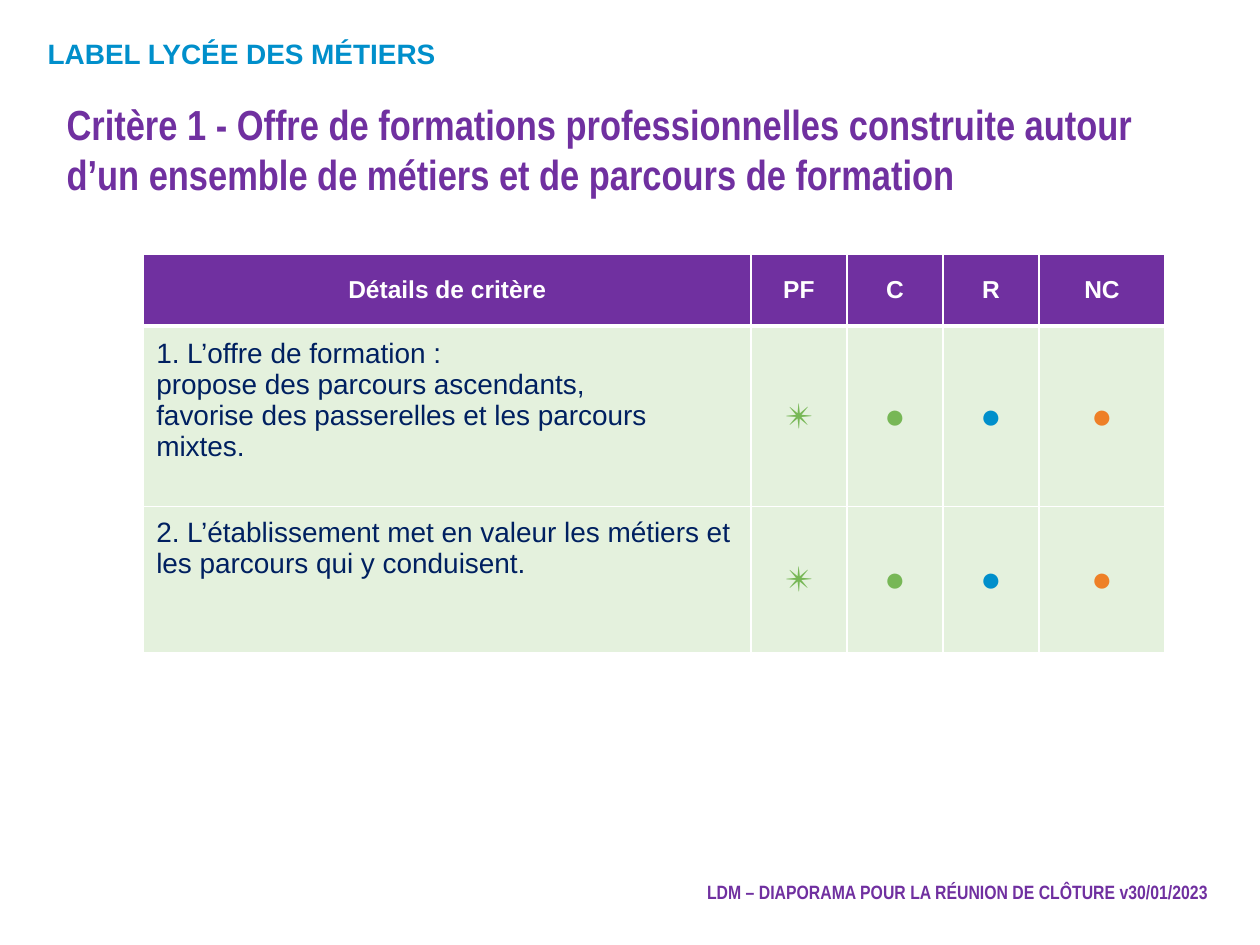
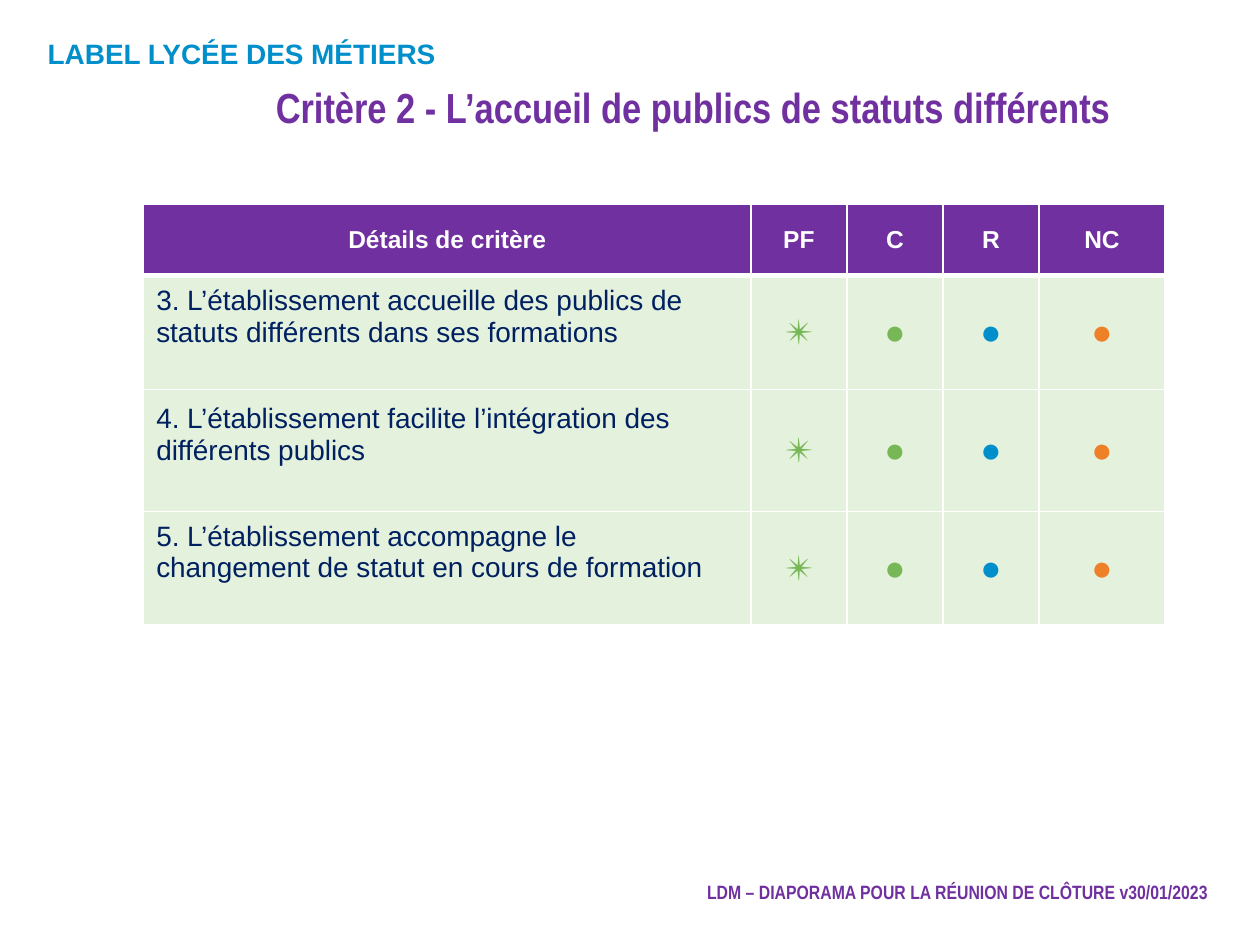
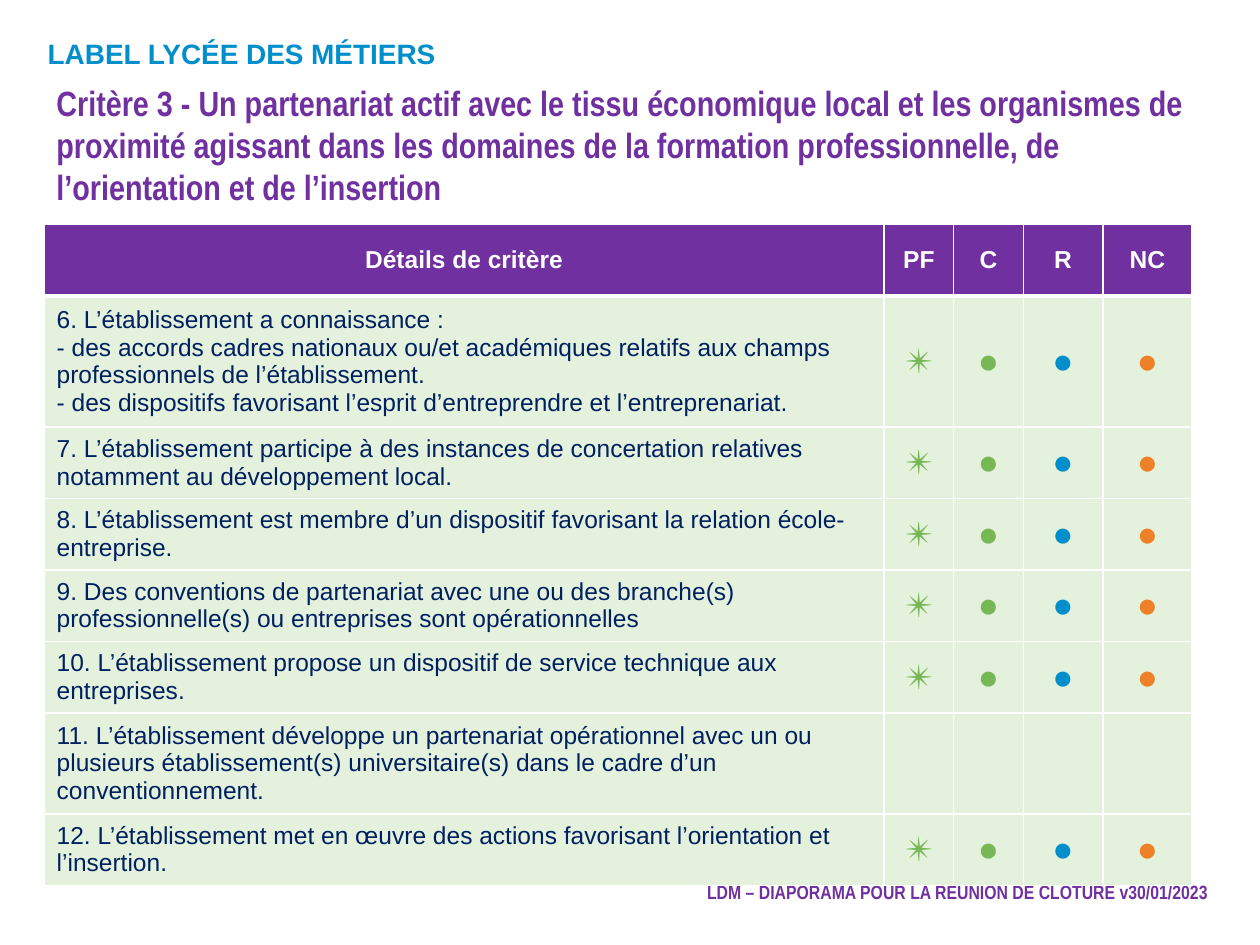
from lxml.etree import SubElement
from pptx import Presentation
from pptx.dml.color import RGBColor
from pptx.enum.text import MSO_ANCHOR, MSO_AUTO_SIZE, PP_ALIGN
from pptx.oxml.ns import qn
from pptx.util import Pt

PURPLE = RGBColor(0x70, 0x30, 0xA0)
BLUE = RGBColor(0x00, 0x8F, 0xCB)
NAVY = RGBColor(0x00, 0x20, 0x60)
GREEN = RGBColor(0x77, 0xB7, 0x56)
ORANGE = RGBColor(0xEE, 0x80, 0x27)
PALE_GREEN = RGBColor(0xE4, 0xF1, 0xDD)
WHITE = RGBColor(0xFF, 0xFF, 0xFF)

BODY_FONT, TITLE_FONT = "Arial", "Arial Narrow"
BANNER = "LABEL LYCÉE DES MÉTIERS"
FOOTER = "LDM – DIAPORAMA POUR LA RÉUNION DE CLÔTURE v30/01/2023"
HEADINGS = ["Détails de critère", "PF", "C", "R", "NC"]
RATINGS = [("✴", GREEN), ("●", GREEN), ("●", BLUE), ("●", ORANGE)]
HEADER_HEIGHT = 41
CELL_MARGIN = 3.6
WIDE_COLUMNS = [347, 54.9, 54.9, 54.9, 72]
FULL_COLUMNS = [480, 39.8, 39.8, 45.4, 51]

# Rows: text, row height, space kept free under the text, rated or not
CRITERIA = [
    dict(
        title="Critère 1 - Offre de formations professionnelles construite autour "
              "d’un ensemble de métiers et de parcours de formation",
        title_box=(31, 52.6, 657.4, 59), title_size=24,
        table_at=(82.1, 145.4), columns=WIDE_COLUMNS, size=16,
        rows=[
            ("1. L’offre de formation :\npropose des parcours ascendants,\n"
             "favorise des passerelles et les parcours mixtes.", 103, 18, True),
            ("2. L’établissement met en valeur les métiers et les parcours "
             "qui y conduisent.", 83.5, 36, True),
        ]),
    dict(
        title="Critère 2 - L’accueil de publics de statuts différents",
        title_box=(150.5, 43.2, 589.7, 59), title_size=24,
        table_at=(82.1, 116.6), columns=WIDE_COLUMNS, size=16,
        rows=[
            ("3. L’établissement accueille des publics de statuts différents "
             "dans ses formations", 65, 18, True),
            ("4. L’établissement facilite l’intégration des différents publics",
             69.8, 18, True),
            ("5. L’établissement accompagne le changement de statut en cours "
             "de formation", 64.7, 18, True),
        ]),
    dict(
        title="Critère 3 - Un partenariat actif avec le tissu économique local et "
              "les organismes de proximité agissant dans les domaines de la "
              "formation professionnelle, de l’orientation et de l’insertion",
        title_box=(25.2, 43.2, 674.6, 59), title_size=20,
        table_at=(25.2, 128.2), columns=FULL_COLUMNS, size=14,
        rows=[
            ("6. L’établissement a connaissance :\n"
             "- des accords cadres nationaux ou/et académiques relatifs aux champs "
             "professionnels de l’établissement.\n"
             "- des dispositifs favorisant l’esprit d’entreprendre et "
             "l’entreprenariat.", 74.8, 0, True),
            ("7. L’établissement participe à des instances de concertation "
             "relatives notamment au développement local.", 40.8, 0, True),
            ("8. L’établissement est membre d’un dispositif favorisant la "
             "relation école-entreprise.", 40.8, 0, True),
            ("9. Des conventions de partenariat avec une ou des branche(s) "
             "professionnelle(s) ou entreprises sont opérationnelles", 40.8, 0, True),
            ("10. L’établissement propose un dispositif de service technique aux "
             "entreprises.", 40.8, 0, True),
            ("11. L’établissement développe un partenariat opérationnel avec un ou "
             "plusieurs établissement(s) universitaire(s) dans le cadre d’un "
             "conventionnement.", 57.7, 0, False),
            ("12. L’établissement met en œuvre des actions favorisant "
             "l’orientation et l’insertion.", 40.8, 0, True),
        ]),
]


def write(tf, text, *, size, color, font=BODY_FONT, bold=False, align=PP_ALIGN.LEFT):
    """Write one paragraph per line of text."""
    for i, line in enumerate(text.split("\n")):
        p = tf.paragraphs[0] if i == 0 else tf.add_paragraph()
        p.alignment = align
        r = p.add_run()
        r.text = line
        r.font.name, r.font.size, r.font.bold = font, Pt(size), bold
        r.font.color.rgb = color


def add_text(s, box, text, *, grow=False, **style):
    tf = s.shapes.add_textbox(*map(Pt, box)).text_frame
    tf.word_wrap = True
    tf.auto_size = MSO_AUTO_SIZE.SHAPE_TO_FIT_TEXT if grow else MSO_AUTO_SIZE.NONE
    write(tf, text, **style)


def style_cell(cell, fill, top=1, bottom=1):
    """Set white borders (widths in points), fill and anchor."""
    tc_pr = cell._tc.get_or_add_tcPr()
    for side, width in (("L", 1), ("R", 1), ("T", top), ("B", bottom)):
        ln = SubElement(tc_pr, qn(f"a:ln{side}"), w=str(Pt(width)))
        SubElement(SubElement(ln, qn("a:solidFill")), qn("a:srgbClr"), val=str(WHITE))
    cell.fill.solid()
    cell.fill.fore_color.rgb = fill
    cell.vertical_anchor = MSO_ANCHOR.MIDDLE


def add_criteria_table(s, left, top, columns, rows, size):
    heights = [HEADER_HEIGHT] + [height for _, height, _, _ in rows]
    table = s.shapes.add_table(len(heights), len(columns), Pt(left), Pt(top),
                               Pt(sum(columns)), Pt(sum(heights))).table
    table.horz_banding = False
    for column, width in zip(table.columns, columns):
        column.width = Pt(width)
    for row, height in zip(table.rows, heights):
        row.height = Pt(height)

    # Header row
    for cell, heading in zip(table.rows[0].cells, HEADINGS):
        style_cell(cell, PURPLE, bottom=3)
        write(cell.text_frame, heading, size=14, color=WHITE, bold=True,
              align=PP_ALIGN.CENTER)

    # Criterion rows with their ratings
    for i, (text, _, space_below, rated) in enumerate(rows, 1):
        detail, *marks = table.rows[i].cells
        for cell in (detail, *marks):
            style_cell(cell, PALE_GREEN, top=3 if i == 1 else 1)
        detail.margin_bottom = Pt(CELL_MARGIN + space_below)
        write(detail.text_frame, text, size=size, color=NAVY)
        if rated:
            for cell, (mark, color) in zip(marks, RATINGS):
                write(cell.text_frame, mark, size=20, color=color,
                      align=PP_ALIGN.CENTER)


def add_frame(s):
    """Footer and banner shared by all slides."""
    add_text(s, (215.3, 499.7, 482.4, 20.9), FOOTER, grow=True, size=11,
             color=PURPLE, font=TITLE_FONT, bold=True, align=PP_ALIGN.RIGHT)
    add_text(s, (20.2, 17.3, 283.7, 26.6), BANNER, grow=True, size=16,
             color=BLUE, bold=True)


def add_criterion_slide(prs, title, title_box, title_size, table_at, columns, size, rows):
    s = prs.slides.add_slide(prs.slide_layouts[6])
    add_frame(s)
    add_criteria_table(s, *table_at, columns, rows, size)
    add_text(s, title_box, title, size=title_size, color=PURPLE,
             font=TITLE_FONT, bold=True)


def main():
    prs = Presentation()
    prs.slide_width, prs.slide_height = Pt(720), Pt(540)
    for criterion in CRITERIA:
        add_criterion_slide(prs, **criterion)
    prs.save("out.pptx")


if __name__ == "__main__":
    main()
